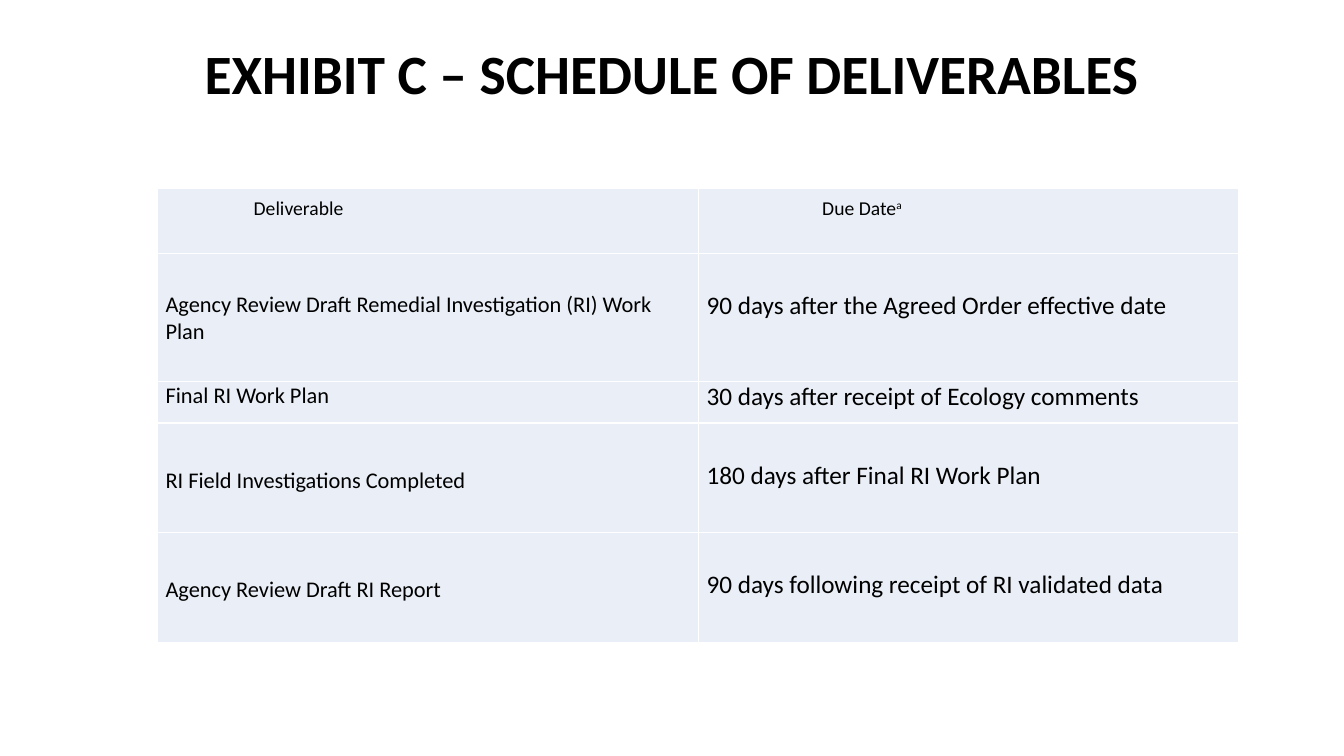
import dataclasses

import pptx
import pptx.dml.color
import pptx.enum.text
import pptx.oxml
import pptx.oxml.ns
import pptx.util

Pt = pptx.util.Pt
Align = pptx.enum.text.PP_ALIGN
Anchor = pptx.enum.text.MSO_ANCHOR


@dataclasses.dataclass(frozen=True)
class Theme:
    font: str = "Calibri"
    text: str = "000000"
    cell: str = "EAEFF7"
    border: str = "FFFFFF"
    title_size: float = 39.6
    header_size: float = 14
    deliverable_size: float = 16
    due_size: float = 18


COLUMN_WIDTHS = (386.5, 386)
ROW_HEIGHTS = (46.5, 91.5, 29.5, 78, 79)
SIDE_MARGIN = 5.76
HEADER_TOP = 6

# Heading, its superscript and its centre measured from the cell's text edge
HEADINGS = (("Deliverable", "", 95), ("Due Date", "a", 111))

# Deliverable, due date and the space above each of them
SCHEDULE = (
    ("Agency Review Draft Remedial Investigation (RI) Work Plan",
     "90 days after the Agreed Order effective date", 26.6, 26.6),
    ("Final RI Work Plan", "30 days after receipt of Ecology comments", 0, 0),
    ("RI Field Investigations Completed", "180 days after Final RI Work Plan", 31.5, 26.6),
    ("Agency Review Draft RI Report",
     "90 days following receipt of RI validated data", 31.5, 26.6),
)


def apply(target, values):
    for name, value in values.items():
        setattr(target, name, value)


class SlideBuilder:
    def __init__(self, slide, theme):
        self.slide = slide
        self.theme = theme

    def add_run(self, paragraph, text, size, bold=False, superscript=False):
        run = paragraph.add_run()
        run.text = text
        apply(run.font, {"name": self.theme.font, "size": Pt(size), "bold": bold})
        run.font.color.rgb = pptx.dml.color.RGBColor.from_string(self.theme.text)
        if superscript:
            run.font._element.set("baseline", "30000")

    def add_title(self, text, left, top, width, height):
        title = self.slide.shapes.title
        apply(title, {"left": Pt(left), "top": Pt(top),
                      "width": Pt(width), "height": Pt(height)})
        apply(title.text_frame, {
            "word_wrap": True, "auto_size": pptx.enum.text.MSO_AUTO_SIZE.NONE,
            "vertical_anchor": Anchor.BOTTOM, "margin_top": 0, "margin_bottom": Pt(49.7)})
        paragraph = title.text_frame.paragraphs[0]
        apply(paragraph, {"alignment": Align.CENTER, "line_spacing": 0.9})
        self.add_run(paragraph, text, self.theme.title_size, bold=True)

    def add_table(self, left, top, column_widths, row_heights):
        table = self.slide.shapes.add_table(
            len(row_heights), len(column_widths), Pt(left), Pt(top),
            Pt(sum(column_widths)), Pt(sum(row_heights))).table
        apply(table, {"first_row": False, "horz_banding": False})
        for column, width in zip(table.columns, column_widths):
            column.width = Pt(width)
        for row, height in zip(table.rows, row_heights):
            row.height = Pt(height)
        return table

    def add_borders(self, cell):
        properties = cell._tc.get_or_add_tcPr()
        for index, side in enumerate(("lnL", "lnR", "lnT", "lnB")):
            properties.insert(index, pptx.oxml.parse_xml(
                f'<a:{side} {pptx.oxml.ns.nsdecls("a")} w="{Pt(1)}"><a:solidFill>'
                f'<a:srgbClr val="{self.theme.border}"/></a:solidFill></a:{side}>'))

    def fill_cell(self, cell, text, size, top, right=SIDE_MARGIN,
                  alignment=Align.LEFT, superscript=""):
        apply(cell, {"margin_left": Pt(SIDE_MARGIN), "margin_right": Pt(right),
                     "margin_top": Pt(top), "margin_bottom": 0,
                     "vertical_anchor": Anchor.TOP})
        cell.fill.solid()
        cell.fill.fore_color.rgb = pptx.dml.color.RGBColor.from_string(self.theme.cell)
        self.add_borders(cell)
        paragraph = cell.text_frame.paragraphs[0]
        paragraph.alignment = alignment
        self.add_run(paragraph, text, size)
        if superscript:
            self.add_run(paragraph, superscript, size, superscript=True)


def main():
    presentation = pptx.Presentation()
    apply(presentation, {"slide_width": Pt(960), "slide_height": Pt(540)})
    theme = Theme()
    builder = SlideBuilder(presentation.slides.add_slide(presentation.slide_layouts[5]), theme)
    builder.add_title("EXHIBIT C – SCHEDULE OF DELIVERABLES", 66, 34.5, 828, 91.5)

    table = builder.add_table(112.5, 134.75, COLUMN_WIDTHS, ROW_HEIGHTS)
    for column, (heading, superscript, centre) in enumerate(HEADINGS):
        right = COLUMN_WIDTHS[column] - SIDE_MARGIN - 2 * centre
        builder.fill_cell(table.cell(0, column), heading, theme.header_size, HEADER_TOP,
                          right, Align.CENTER, superscript)
    for row, (deliverable, due, deliverable_top, due_top) in enumerate(SCHEDULE, start=1):
        builder.fill_cell(table.cell(row, 0), deliverable, theme.deliverable_size, deliverable_top)
        builder.fill_cell(table.cell(row, 1), due, theme.due_size, due_top)

    presentation.save("out.pptx")


if __name__ == "__main__":
    main()
